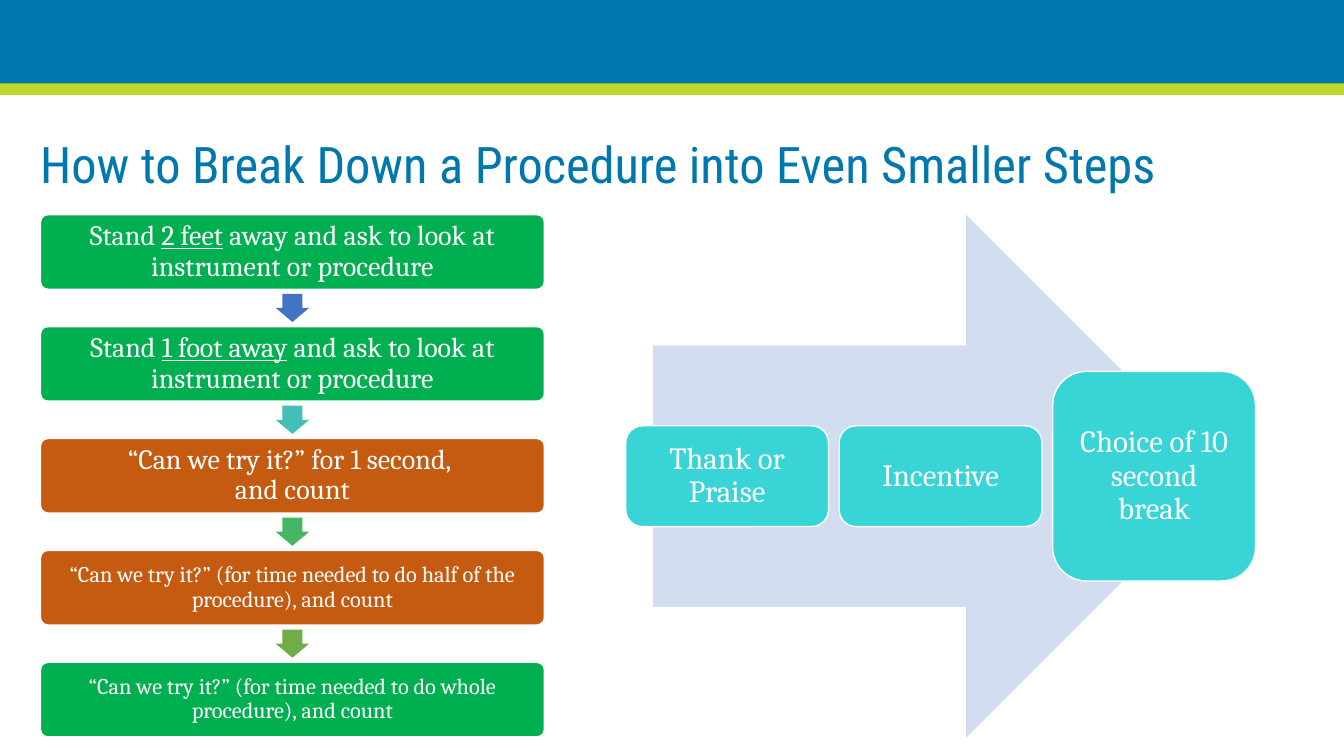
import pptx
import pptx.util
import pptx.dml.color
import pptx.enum.shapes
import pptx.enum.text

Cm = pptx.util.Cm
RGBColor = pptx.dml.color.RGBColor
SHAPE = pptx.enum.shapes.MSO_SHAPE
PP_ALIGN = pptx.enum.text.PP_ALIGN
MSO_ANCHOR = pptx.enum.text.MSO_ANCHOR

BLUE = RGBColor(0x00, 0x78, 0xAD)
LIME = RGBColor(0xC1, 0xD7, 0x2E)
GREEN = RGBColor(0x00, 0xB0, 0x50)
ORANGE = RGBColor(0xC5, 0x5A, 0x11)
TURQUOISE = RGBColor(0x38, 0xD4, 0xD6)
PALE_BLUE = RGBColor(0xD2, 0xDE, 0xEF)
WHITE = RGBColor(0xFF, 0xFF, 0xFF)
ARROW_COLORS = [RGBColor(0x44, 0x72, 0xC4), RGBColor(0x43, 0xBE, 0xB9),
                RGBColor(0x45, 0xB6, 0x64), RGBColor(0x70, 0xAD, 0x47)]


def add_shape(kind, left, top, width, height, fill, line=None):
    sp = s.shapes.add_shape(kind, Cm(left), Cm(top), Cm(width), Cm(height))
    sp.shadow.inherit = False
    sp.fill.solid()
    sp.fill.fore_color.rgb = fill
    if line is None:
        sp.line.fill.background()
    else:
        sp.line.color.rgb = line
        sp.line.width = pptx.util.Pt(1)
    return sp


def add_label(sp, parts, size, inset):
    """Write (text, underlined) parts into a shape; "\\v" breaks the line."""
    tf = sp.text_frame
    margin = Cm(inset)
    frame_format = {"word_wrap": True, "vertical_anchor": MSO_ANCHOR.MIDDLE,
                    "margin_left": margin, "margin_right": margin,
                    "margin_top": margin, "margin_bottom": margin}
    for name, value in frame_format.items():
        setattr(tf, name, value)
    p = tf.paragraphs[0]
    p.alignment = PP_ALIGN.CENTER
    p.line_spacing = 0.9
    for text, underlined in parts:
        if text == "\v":
            p.add_line_break()
            continue
        r = p.add_run()
        r.text = text
        font_format = {"name": "Cambria", "size": pptx.util.Pt(size),
                       "underline": underlined}
        for name, value in font_format.items():
            setattr(r.font, name, value)
        r.font.color.rgb = WHITE


prs = pptx.Presentation()
prs.slide_width, prs.slide_height = Cm(33.87), Cm(19.05)
s = prs.slides.add_slide(prs.slide_layouts[5])

# Header bands
add_shape(SHAPE.RECTANGLE, 0, 0, 33.87, 2.16, BLUE)
add_shape(SHAPE.RECTANGLE, 0, 2.1, 33.87, 0.3, LIME)

# Title
title = s.shapes.title
title.left, title.top, title.width, title.height = Cm(0.76), Cm(3.05), Cm(29.21), Cm(2.34)
tf = title.text_frame
tf.text = "How to Break Down a Procedure into Even Smaller Steps"
tf.auto_size = pptx.enum.text.MSO_AUTO_SIZE.NONE
tf.vertical_anchor = MSO_ANCHOR.MIDDLE
p = tf.paragraphs[0]
p.alignment = PP_ALIGN.LEFT
p.line_spacing = 0.9
for name, value in {"name": "Roboto Condensed", "size": pptx.util.Pt(36)}.items():
    setattr(p.font, name, value)
p.font.color.rgb = BLUE

# Steps on the left, joined by small down arrows
steps = [
    (GREEN, 20, 0.2, [("Stand ", False), ("2 feet", True),
                      (" away and ask to look at instrument or procedure", False)]),
    (GREEN, 20, 0.2, [("Stand ", False), ("1 foot away", True),
                      (" and ask to look at instrument or procedure", False)]),
    (ORANGE, 20, 0.2, [("“Can we try it?” for 1 second, ", False), ("\v", False),
                       ("and count", False)]),
    (ORANGE, 16, 0.17, [("“Can we try it?” (for time needed to do half of the "
                         "procedure), and count", False)]),
    (GREEN, 16, 0.17, [("“Can we try it?” (for time needed to do whole "
                        "procedure), and count", False)]),
]
STEP_LEFT, STEP_TOP, STEP_W, STEP_H, STEP_PITCH = 1.02, 5.41, 12.7, 1.88, 2.82
ARROW_W, ARROW_H = 0.84, 0.71
arrow_left = STEP_LEFT + (STEP_W - ARROW_W) / 2
arrow_offset = (STEP_H + STEP_PITCH - ARROW_H) / 2
for i, (color, size, inset, parts) in enumerate(steps):
    top = STEP_TOP + i * STEP_PITCH
    sp = add_shape(SHAPE.ROUNDED_RECTANGLE, STEP_LEFT, top, STEP_W, STEP_H, color, WHITE)
    sp.adjustments[0] = 0.1
    add_label(sp, parts, size, inset)
    if i < len(ARROW_COLORS):
        sp = add_shape(SHAPE.DOWN_ARROW, arrow_left, top + arrow_offset,
                       ARROW_W, ARROW_H, ARROW_COLORS[i])
        sp.adjustments[0] = 0.6
        sp.adjustments[1] = 0.5

# Large arrow with the responses centred on its axis
add_shape(SHAPE.RIGHT_ARROW, 16.46, 5.41, 14.48, 13.18, PALE_BLUE)
AXIS = 12.0
responses = [("Thank or Praise", 2.54), ("Incentive", 2.54),
             ("Choice of 10 second break", 5.28)]
for i, (text, height) in enumerate(responses):
    sp = add_shape(SHAPE.ROUNDED_RECTANGLE, 15.77 + i * 5.38, AXIS - height / 2,
                   5.11, height, TURQUOISE, WHITE)
    add_label(sp, [(text, False)], 22, 0.23)

prs.save("out.pptx")
